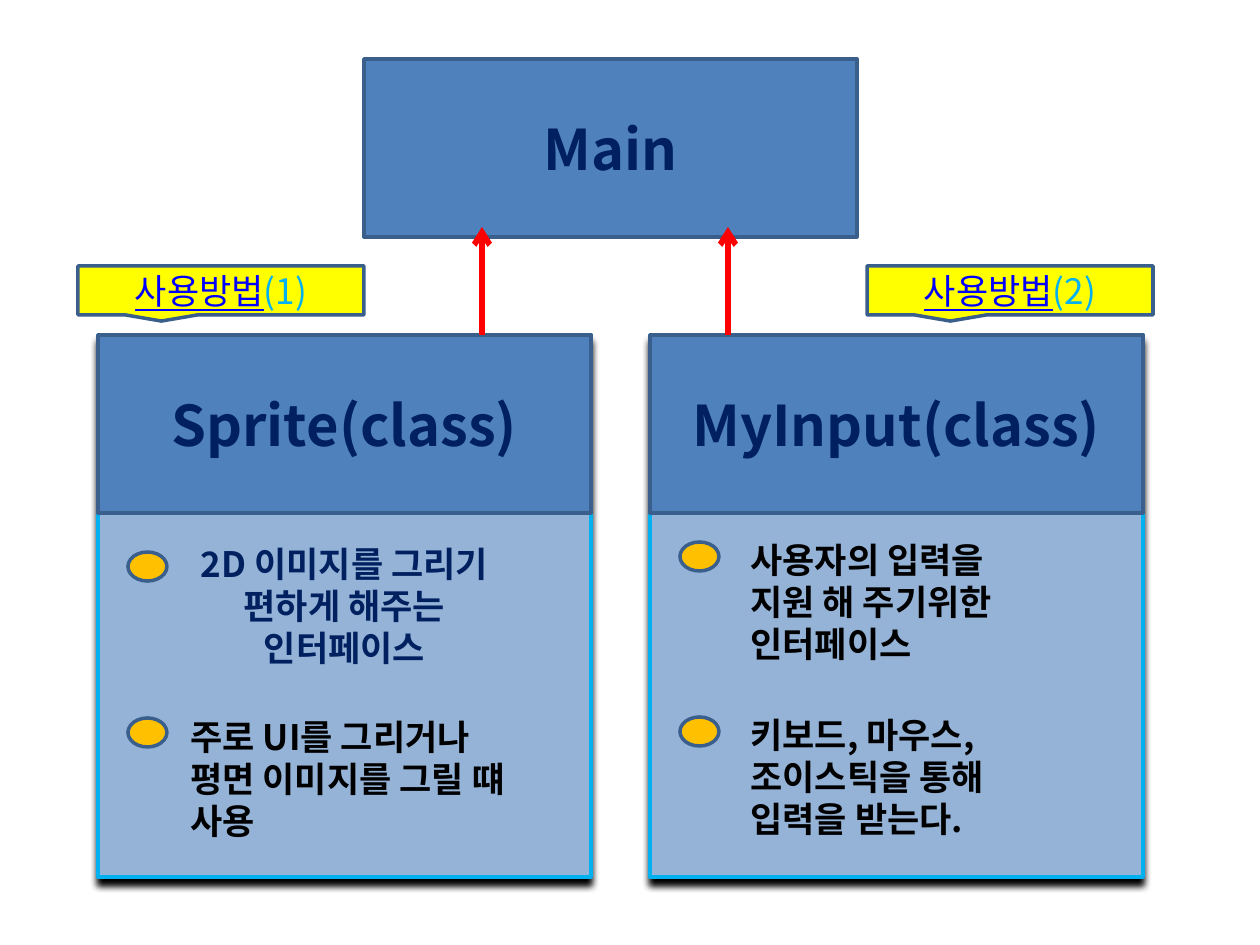
import pptx
import pptx.util
import pptx.dml.color
import pptx.enum.shapes
import pptx.enum.text
import pptx.oxml.ns
from lxml import etree

RGBColor = pptx.dml.color.RGBColor
SHAPE = pptx.enum.shapes.MSO_SHAPE
ALIGN = pptx.enum.text.PP_ALIGN
ANCHOR = pptx.enum.text.MSO_ANCHOR
qn = pptx.oxml.ns.qn

PX = 914400 / 126
FONT = "Noto Sans CJK KR"
BLUE = RGBColor(0x4F, 0x81, 0xBD)
PALE_BLUE = RGBColor(0x95, 0xB3, 0xD7)
STEEL = RGBColor(0x3A, 0x5F, 0x8C)
CYAN = RGBColor(0x00, 0xB0, 0xF0)
NAVY = RGBColor(0x00, 0x20, 0x60)
BLACK = RGBColor(0x00, 0x00, 0x00)
RED = RGBColor(0xFF, 0x00, 0x00)
ORANGE = RGBColor(0xFF, 0xC0, 0x00)
YELLOW = RGBColor(0xFF, 0xFF, 0x00)
LINK_BLUE = RGBColor(0x00, 0x00, 0xFF)

BOX_W, HEAD_H, CARD_H = 493, 178, 542
CARD_TOP = 335


def emu(*lengths):
    return [round(length * PX) for length in lengths]


def style(paragraph, size, color=None, bold=None):
    paragraph.font.size = pptx.util.Pt(size)
    paragraph.font.name = FONT
    paragraph.font.bold = bold
    if color is not None:
        paragraph.font.color.rgb = color
    properties = paragraph.font._element
    etree.SubElement(properties, qn("a:ea"), typeface=FONT)


def write_lines(frame, lines, size, color, align):
    frame.word_wrap = True
    for index, line in enumerate(lines):
        paragraph = frame.paragraphs[0] if index == 0 else frame.add_paragraph()
        paragraph.text = line
        paragraph.alignment = align
        style(paragraph, size, color, True)


def add_outlined(slide, kind, box, fill, outline=STEEL):
    shape = slide.shapes.add_shape(kind, *emu(*box))
    shape.shadow.inherit = False
    shape.fill.solid()
    shape.fill.fore_color.rgb = fill
    shape.line.color.rgb = outline
    shape.line.width = pptx.util.Pt(2)
    shape.text_frame.vertical_anchor = ANCHOR.MIDDLE
    return shape


def add_heading(slide, x, y, name):
    heading = add_outlined(slide, SHAPE.RECTANGLE, (x, y, BOX_W, HEAD_H), BLUE)
    write_lines(heading.text_frame, [name], 32, NAVY, ALIGN.CENTER)


def add_drop_shadow(shape):
    effects = shape._element.spPr.find(qn("a:effectLst"))
    distance = str(pptx.util.Pt(4))
    shadow = etree.SubElement(effects, qn("a:outerShdw"), blurRad=distance,
                              dist=distance, dir="5400000", rotWithShape="0")
    etree.SubElement(shadow, qn("a:srgbClr"), val="000000")


def add_card(slide, x, y, name, bullet_tops, summary=()):
    body = add_outlined(slide, SHAPE.RECTANGLE, (x, y, BOX_W, CARD_H), PALE_BLUE, CYAN)
    add_drop_shadow(body)
    write_lines(body.text_frame, summary, 20, NAVY, ALIGN.CENTER)
    add_heading(slide, x, y, name)
    for top in bullet_tops:
        add_outlined(slide, SHAPE.OVAL, (x + 30, y + top, 39, 29), ORANGE)


def add_description(slide, x, y, width, lines):
    description = slide.shapes.add_textbox(*emu(x, y, width, 140))
    write_lines(description.text_frame, lines, 20, BLACK, ALIGN.LEFT)


def add_usage_callout(slide, x, y, number):
    callout = add_outlined(slide, SHAPE.RECTANGULAR_CALLOUT, (x, y, 286, 49), YELLOW)
    callout.text_frame.word_wrap = True
    paragraph = callout.text_frame.paragraphs[0]
    paragraph.alignment = ALIGN.CENTER
    style(paragraph, 20)
    for text, color, underline in (("사용방법", LINK_BLUE, True),
                                   (f"({number})", CYAN, False)):
        run = paragraph.add_run()
        run.text = text
        run.font.color.rgb = color
        run.font.underline = underline


def add_arrow(slide, x, start, end):
    arrow = slide.shapes.add_connector(
        pptx.enum.shapes.MSO_CONNECTOR.STRAIGHT, *emu(x, start, x, end))
    arrow.line.color.rgb = RED
    arrow.line.width = pptx.util.Pt(3.25)
    etree.SubElement(arrow.line._get_or_add_ln(), qn("a:tailEnd"), type="arrow")
    etree.SubElement(arrow._element.spPr, qn("a:effectLst"))


def build_class_slide(presentation):
    slide = presentation.slides.add_slide(presentation.slide_layouts[6])
    sprite_x, input_x = 98, 650

    add_heading(slide, 364, 59, "Main")
    add_card(slide, sprite_x, CARD_TOP, "Sprite(class)", (217, 383),
             ("2D 이미지를 그리기", "편하게 해주는", "인터페이스"))
    add_description(slide, sprite_x + 80, CARD_TOP + 374, 393,
                    ("주로 UI를 그리거나", "평면 이미지를 그릴 떄", "사용"))
    add_card(slide, input_x, CARD_TOP, "MyInput(class)", (207, 382))
    add_description(slide, input_x + 88, CARD_TOP + 197, 297,
                    ("사용자의 입력을", "지원 해 주기위한", "인터페이스"))
    add_description(slide, input_x + 88, CARD_TOP + 372, 285,
                    ("키보드, 마우스,", "조이스틱을 통해", "입력을 받는다."))

    for arrow_x in (482, 728):
        add_arrow(slide, arrow_x, CARD_TOP, 227)
    for number, callout_x in enumerate((78, 867), 1):
        add_usage_callout(slide, callout_x, 266, number)


def main():
    presentation = pptx.Presentation()
    presentation.slide_width, presentation.slide_height = emu(1260, 945)
    build_class_slide(presentation)
    presentation.save("out.pptx")


if __name__ == "__main__":
    main()
